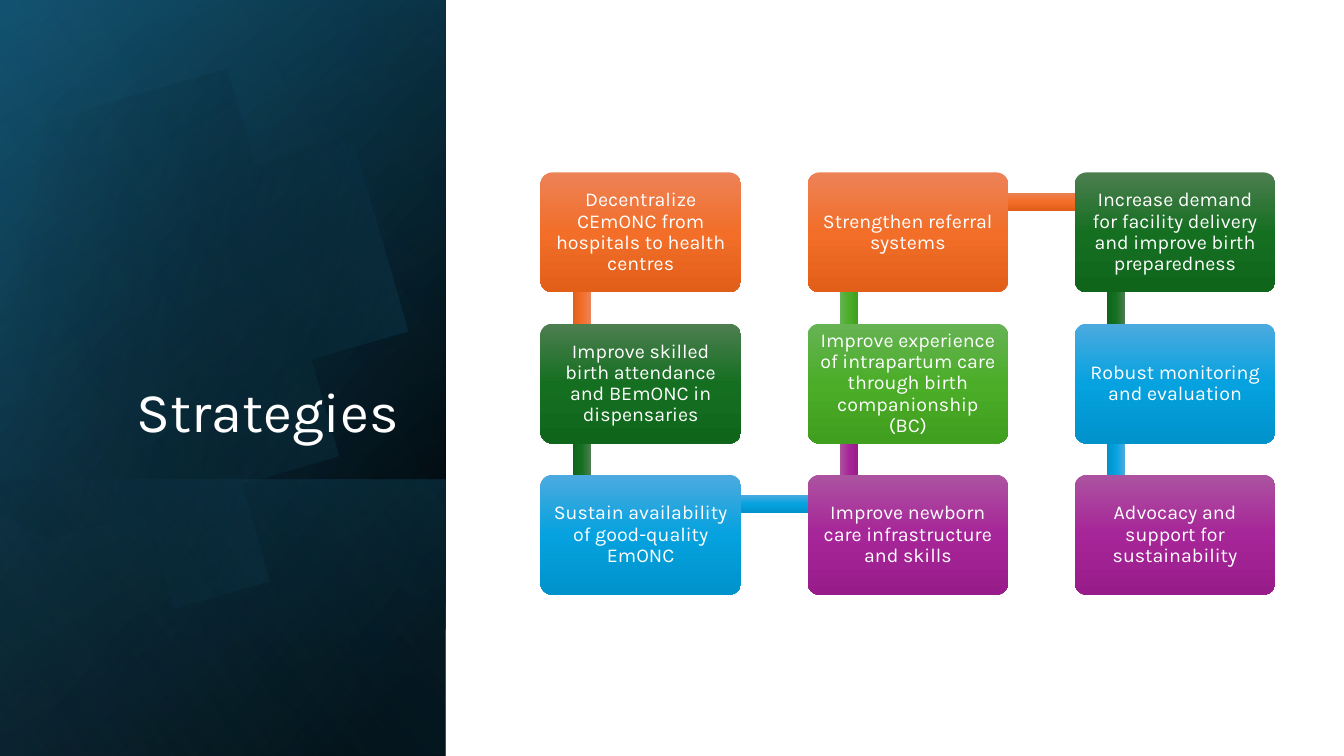
import math

import pptx
import pptx.dml.color
import pptx.enum.shapes
import pptx.enum.text
import pptx.oxml
import pptx.oxml.ns
import pptx.util

RGB = pptx.dml.color.RGBColor
SHAPE = pptx.enum.shapes.MSO_SHAPE
ALIGN = pptx.enum.text.PP_ALIGN
ANCHOR = pptx.enum.text.MSO_ANCHOR
Inches = pptx.util.Inches

WHITE, BLACK = RGB(0xFF, 0xFF, 0xFF), RGB(0, 0, 0)
NAVY, TEAL, SKY = RGB(0x10, 0x48, 0x62), RGB(0x15, 0x60, 0x82), RGB(0x46, 0xB1, 0xE1)
# Top, middle and bottom shade of each card colour
ORANGE = RGB(0xED, 0x82, 0x57), RGB(0xF2, 0x6E, 0x29), RGB(0xE2, 0x5F, 0x1A)
FOREST = RGB(0x4D, 0x7E, 0x50), RGB(0x15, 0x6F, 0x21), RGB(0x0F, 0x66, 0x1B)
BLUE = RGB(0x4C, 0xAA, 0xDF), RGB(0x05, 0xA2, 0xDF), RGB(0x00, 0x92, 0xCB)
PURPLE = RGB(0xAC, 0x53, 0xA0), RGB(0xA6, 0x25, 0x98), RGB(0x99, 0x1C, 0x8B)
GREEN = RGB(0x66, 0xB3, 0x54), RGB(0x4B, 0xAD, 0x28), RGB(0x40, 0x9F, 0x1E)

FONT = "Karla"
TITLE = "Strategies"
# Strategies in reading order, with (column, row) on the grid
STRATEGIES = [
    ("Decentralize CEmONC from hospitals to health centres", ORANGE, (0, 0)),
    ("Improve skilled birth attendance and BEmONC in dispensaries", FOREST, (0, 1)),
    ("Sustain availability of good-quality EmONC", BLUE, (0, 2)),
    ("Improve newborn care infrastructure and skills", PURPLE, (1, 2)),
    ("Improve experience of intrapartum care through birth companionship (BC)", GREEN, (1, 1)),
    ("Strengthen referral systems", ORANGE, (1, 0)),
    ("Increase demand for facility delivery and improve birth preparedness", FOREST, (2, 0)),
    ("Robust monitoring and evaluation", BLUE, (2, 1)),
    ("Advocacy and support for sustainability", PURPLE, (2, 2)),
]

# Side panel layers: top, height, flipped, gradient stops (position, colour, opacity), angle
PANEL_W, SLIDE_W, SLIDE_H = 4.42, 13.33, 7.5
LAYERS = [
    (0, 7.5, True, [(8, BLACK, 100), (100, NAVY, 100)], 50),
    (0, 7.5, True, [(0, BLACK, 0), (99, TEAL, 46)], 30),
    (4.76, 2.74, True, [(2, TEAL, 29), (100, BLACK, 30)], 130),
]
SHEEN = (0, 7.5, True, [(0, BLACK, 0), (99, SKY, 11)], 120)

# Disc outline: start, then curves (three points) and lines (one point)
DISC_START = (1.49, 1.1)
DISC_SEGMENTS = [
    [(2.46, 1.12), (3.35, 1.77), (3.63, 2.75)],
    [(3.98, 3.97), (3.28, 5.23), (2.07, 5.58)],
    [(1.31, 5.8), (0.53, 5.61), (-0.03, 5.14)],
    [(-0.15, 5.03)], [(-0.15, 1.75)], [(0, 1.61)],
    [(0.23, 1.42), (0.5, 1.28), (0.8, 1.19)],
    [(1.03, 1.13), (1.26, 1.1), (1.49, 1.1)],
]
DISC_CENTRE, DISC_TILT = (1.58, 3.35), 16.1
DISC_FILL = [(29, BLACK, 0), (100, TEAL, 43)], 30

# Card grid
GRID_X, GRID_Y, STEP_X, STEP_Y = 5.36, 1.71, 2.65, 1.5
CARD_W, CARD_H = 1.99, 1.19
BAR_H, JOINT_X, JOINT_Y = 0.18, 0.41, 0.29

prs = pptx.Presentation()
prs.slide_width, prs.slide_height = Inches(SLIDE_W), Inches(SLIDE_H)
slide = prs.slides.add_slide(prs.slide_layouts[6])


def paint(shape, stops, angle):
    shape.shadow.inherit = False
    shape.line.fill.background()
    shape.fill.background()
    marks = "".join(
        f'<a:gs pos="{pos * 1000}"><a:srgbClr val="{colour}">'
        f'<a:alpha val="{opacity * 1000}"/></a:srgbClr></a:gs>'
        for pos, colour, opacity in stops)
    gradient = pptx.oxml.parse_xml(
        f'<a:gradFill {pptx.oxml.ns.nsdecls("a")} rotWithShape="1"><a:gsLst>{marks}</a:gsLst>'
        f'<a:lin ang="{angle * 60000}" scaled="0"/></a:gradFill>')
    props = shape._element.spPr
    props.replace(props.find(pptx.oxml.ns.qn("a:noFill")), gradient)


def add_centred(kind, cx, cy, width, height, rotation=0):
    shape = slide.shapes.add_shape(kind, Inches(cx - width / 2), Inches(cy - height / 2),
                                   Inches(width), Inches(height))
    shape.rotation = rotation
    return shape


def write(shape, text, size, align, anchor):
    frame = shape.text_frame
    frame.word_wrap = True
    frame.vertical_anchor = anchor
    frame.text = text
    paragraph = frame.paragraphs[0]
    paragraph.alignment, paragraph.line_spacing = align, 0.9
    font = paragraph.runs[0].font
    font.name, font.size = FONT, pptx.util.Pt(size)
    font.color.rgb = WHITE


def add_layer(top, height, flipped, stops, angle):
    layer = add_centred(SHAPE.RECTANGLE, PANEL_W / 2, top + height / 2, height, PANEL_W, 90)
    if flipped:
        layer._element.spPr.xfrm.set("flipH", "1")
    paint(layer, stops, angle)


def disc_outline(steps=16):
    points = [DISC_START]
    for segment in DISC_SEGMENTS:
        if len(segment) == 1:
            points += segment
            continue
        p0, (p1, p2, p3) = points[-1], segment
        for t in (i / steps for i in range(1, steps + 1)):
            u = 1 - t
            points.append(tuple(u**3 * a + 3 * u * u * t * b + 3 * u * t * t * c + t**3 * d
                                for a, b, c, d in zip(p0, p1, p2, p3)))
    return points


def turn(point):
    dx, dy = point[0] - DISC_CENTRE[0], point[1] - DISC_CENTRE[1]
    cos, sin = math.cos(math.radians(DISC_TILT)), math.sin(math.radians(DISC_TILT))
    return DISC_CENTRE[0] + dx * cos - dy * sin, DISC_CENTRE[1] + dx * sin + dy * cos


# Side panel with its disc
for layer in LAYERS:
    add_layer(*layer)
outline = [turn(point) for point in disc_outline()]
builder = slide.shapes.build_freeform(*outline[0], scale=Inches(1))
builder.add_line_segments(outline[1:], close=True)
disc = builder.convert_to_shape()
disc.rotation = 360 - DISC_TILT
paint(disc, *DISC_FILL)
add_layer(*SHEEN)

# Title
heading = slide.shapes.add_textbox(Inches(0.64), Inches(1.84), Inches(3.41), Inches(2.62))
write(heading, TITLE, 40, ALIGN.RIGHT, ANCHOR.BOTTOM)

# Winding path of cards, each with the bar that leads to the next
following = [cell for _, _, cell in STRATEGIES[1:]] + [None]
for (text, shades, (col, row)), target in zip(STRATEGIES, following):
    stops = list(zip((0, 50, 100), shades, (100, 100, 100)))
    left, top = GRID_X + col * STEP_X, GRID_Y + row * STEP_Y
    if target:
        dx, dy = (target[0] - col) * STEP_X, (target[1] - row) * STEP_Y
        bar = add_centred(SHAPE.RECTANGLE, left + JOINT_X + dx / 2, top + JOINT_Y + dy / 2,
                          abs(dx + dy), BAR_H, math.degrees(math.atan2(dy, dx)) % 360)
        paint(bar, stops, 90)
    card = add_centred(SHAPE.ROUNDED_RECTANGLE, left + CARD_W / 2, top + CARD_H / 2,
                       CARD_W, CARD_H)
    card.adjustments[0] = 0.1
    paint(card, stops, 90)
    frame = card.text_frame
    frame.margin_left = frame.margin_right = Inches(0.06)
    frame.margin_top = frame.margin_bottom = Inches(0.06)
    write(card, text, 14, ALIGN.CENTER, ANCHOR.MIDDLE)

prs.save("out.pptx")
